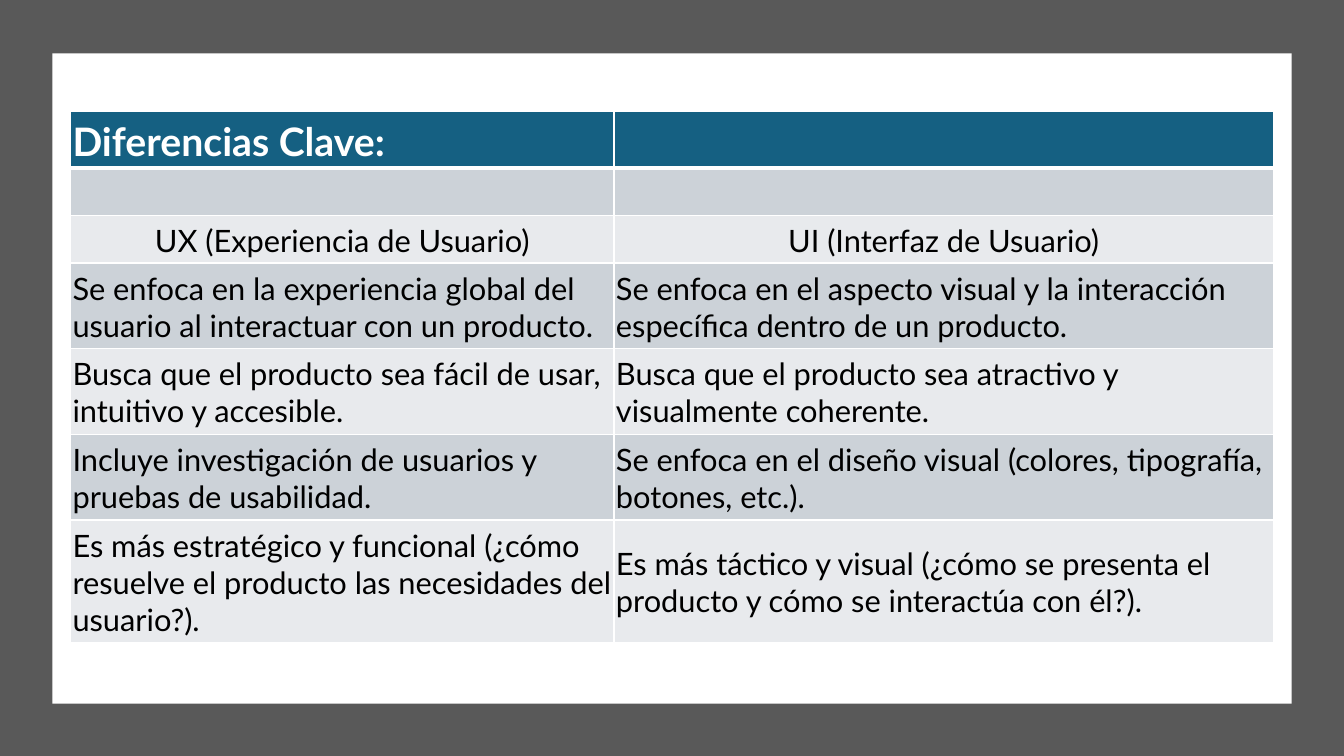
from pptx import Presentation
from pptx.dml.color import RGBColor
from pptx.enum.shapes import MSO_SHAPE
from pptx.enum.text import MSO_ANCHOR, PP_ALIGN
from pptx.oxml import parse_xml
from pptx.oxml.ns import nsdecls
from pptx.util import Inches, Pt

COLORS = {
    "frame": "595959",
    "white": "FFFFFF",
    "header": "156082",
    "dark_band": "CCD2D8",
    "light_band": "E8EAED",
    "text": "000000",
}
COLUMN_WIDTHS = [5.39, 6.54]
ROW_HEIGHTS = [0.56, 0.47, 0.47, 0.85, 0.85, 0.85, 1.22]
DIFFERENCES = [
    ("Diferencias Clave:", ""),
    ("", ""),
    ("UX (Experiencia de Usuario)", "UI (Interfaz de Usuario)"),
    ("Se enfoca en la experiencia global del usuario al interactuar con un producto.",
     "Se enfoca en el aspecto visual y la interacción específica dentro de un producto."),
    ("Busca que el producto sea fácil de usar, intuitivo y accesible.",
     "Busca que el producto sea atractivo y visualmente coherente."),
    ("Incluye investigación de usuarios y pruebas de usabilidad.",
     "Se enfoca en el diseño visual (colores, tipografía, botones, etc.)."),
    ("Es más estratégico y funcional (¿cómo resuelve el producto las necesidades del usuario?).",
     "Es más táctico y visual (¿cómo se presenta el producto y cómo se interactúa con él?)."),
]
HEADER_ROW, TITLES_ROW = 0, 2


class SlideBuilder:
    """Holds the text style and the current slide."""

    def __init__(self, slide, font="Lato", size=22, header_size=28):
        self.slide = slide
        self.font = font
        self.size = size
        self.header_size = header_size

    def panel(self, left, top, width, height, color):
        panel = self.slide.shapes.add_shape(
            MSO_SHAPE.RECTANGLE, Inches(left), Inches(top), Inches(width), Inches(height))
        panel.shadow.inherit = False
        panel.fill.solid()
        panel.fill.fore_color.rgb = RGBColor.from_string(COLORS[color])
        panel.line.fill.background()

    def borders(self, cell, widths):
        properties = cell._tc.get_or_add_tcPr()
        for side, width in widths.items():
            properties.append(parse_xml(
                f'<a:ln{side} {nsdecls("a")} w="{Pt(width)}"><a:solidFill>'
                f'<a:srgbClr val="{COLORS["white"]}"/></a:solidFill></a:ln{side}>'))

    def cell(self, cell, text, row):
        is_header = row == HEADER_ROW
        self.borders(cell, {"L": 1, "R": 1,
                            "T": 3 if row == HEADER_ROW + 1 else 1,
                            "B": 3 if is_header else 1})
        band = "header" if is_header else "dark_band" if row % 2 else "light_band"
        cell.fill.solid()
        cell.fill.fore_color.rgb = RGBColor.from_string(COLORS[band])
        cell.margin_left = cell.margin_right = cell.margin_top = Inches(0.02)
        cell.margin_bottom = 0
        cell.vertical_anchor = MSO_ANCHOR.MIDDLE
        cell.text = text
        paragraph = cell.text_frame.paragraphs[0]
        paragraph.alignment = PP_ALIGN.CENTER if row == TITLES_ROW else PP_ALIGN.LEFT
        font = paragraph.font
        font.name = self.font
        font.size = Pt(self.header_size if is_header else self.size)
        font.bold = is_header
        font.color.rgb = RGBColor.from_string(COLORS["white" if is_header else "text"])

    def table(self, left, top, widths, heights, rows):
        table = self.slide.shapes.add_table(
            len(rows), len(widths), Inches(left), Inches(top),
            Inches(sum(widths)), Inches(sum(heights))).table
        for column, width in zip(table.columns, widths):
            column.width = Inches(width)
        for row, (height, texts) in enumerate(zip(heights, rows)):
            table.rows[row].height = Inches(height)
            for column, text in enumerate(texts):
                self.cell(table.cell(row, column), text, row)


def main():
    presentation = Presentation()
    presentation.slide_width = Inches(13.33)
    presentation.slide_height = Inches(7.5)
    builder = SlideBuilder(presentation.slides.add_slide(presentation.slide_layouts[6]))
    builder.panel(0, 0, 13.33, 7.5, "frame")
    builder.panel(0.52, 0.53, 12.29, 6.45, "white")
    builder.table(0.7, 1.11, COLUMN_WIDTHS, ROW_HEIGHTS, DIFFERENCES)
    presentation.save("out.pptx")


if __name__ == "__main__":
    main()
